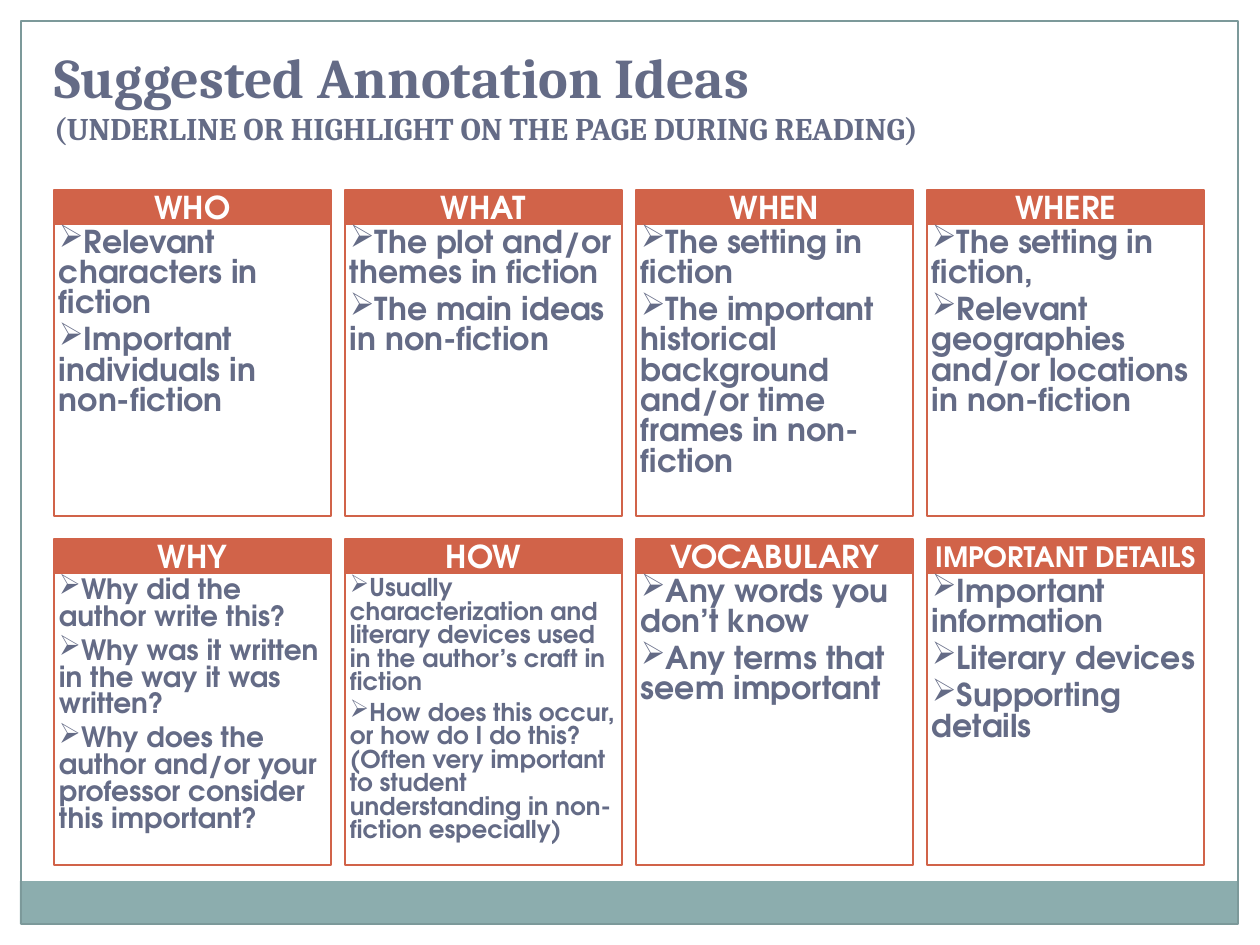
from dataclasses import dataclass

from lxml import etree
from pptx import Presentation
from pptx import util as u
from pptx.dml.color import RGBColor
from pptx.enum import shapes, text
from pptx.oxml.ns import qn

TITLE = "Suggested Annotation Ideas"
SUBTITLE = "(UNDERLINE OR HIGHLIGHT ON THE PAGE DURING READING)"

# heading, heading size, body size, points
CARDS = [
    ("WHO", 18, 18, ["Relevant characters in fiction",
                     "Important individuals in non-fiction"]),
    ("WHAT", 18, 18, ["The plot and/or themes in fiction",
                      "The main ideas in non-fiction"]),
    ("WHEN", 18, 18, ["The setting in fiction",
                      "The important historical background and/or time frames in non-fiction"]),
    ("WHERE", 18, 18, ["The setting in fiction,",
                       "Relevant geographies and/or locations in non-fiction"]),
    ("WHY", 18, 16, ["Why did the author write this?",
                     "Why was it written in the way it was written?",
                     "Why does the author and/or your professor consider this important?"]),
    ("HOW", 18, 14, ["Usually characterization and literary devices used in the author’s craft in fiction",
                     "How does this occur, or how do I do this? (Often very important to student "
                     "understanding in non-fiction especially)"]),
    ("VOCABULARY", 18, 18, ["Any words you don’t know",
                            "Any terms that seem important"]),
    ("IMPORTANT DETAILS", 16, 18, ["Important information", "Literary devices",
                                   "Supporting details"]),
]


@dataclass(frozen=True)
class Theme:
    accent: str = "D16349"
    ink: str = "646B86"
    white: str = "FFFFFF"
    band: str = "8CADAE"
    frame: str = "7C999A"
    title_font: str = "Cambria"
    body_font: str = "TeX Gyre Adventor"
    title_size: int = 32
    subtitle_size: int = 18


THEME = Theme()
PX = 914400 / 126

COLUMNS = 4
LEFT, TOP = 54, 190
PITCH_X, PITCH_Y = 291, 349
CARD_WIDTH, HEADER_HEIGHT, BODY_HEIGHT = 277, 34, 292
INSET = 5


def px(count):
    return u.Emu(round(count * PX))


def add_box(parent, bounds, fill=None, line=None, line_width=1):
    box = parent.add_shape(shapes.MSO_SHAPE.RECTANGLE, *map(px, bounds))
    box.shadow.inherit = False
    if fill:
        box.fill.solid()
        box.fill.fore_color.rgb = RGBColor.from_string(fill)
    else:
        box.fill.background()
    if line:
        box.line.color.rgb = RGBColor.from_string(line)
        box.line.width = u.Pt(line_width)
    else:
        box.line.fill.background()
    return box


def set_frame(box, inset, anchor):
    frame = box.text_frame
    frame.word_wrap = True
    frame.vertical_anchor = anchor
    frame.margin_left = frame.margin_right = px(inset)
    frame.margin_top = frame.margin_bottom = px(inset)
    return frame


def write_paragraphs(frame, lines, font, color, align):
    """Write (words, size) lines as bold paragraphs and return them."""
    for number, (words, size) in enumerate(lines):
        para = frame.paragraphs[0] if number == 0 else frame.add_paragraph()
        para.alignment = align
        span = para.add_run()
        span.text = words
        span.font.name = font
        span.font.size = u.Pt(size)
        span.font.bold = True
        span.font.color.rgb = RGBColor.from_string(color)
    return frame.paragraphs


def add_bullet(para):
    para.line_spacing = 0.8
    para.space_before = u.Pt(4)
    props = para._p.get_or_add_pPr()
    props.set("marL", "0")
    props.set("indent", "0")
    etree.SubElement(props, qn("a:buChar")).set("char", "➢")


def add_card(page, index, heading, heading_size, body_size, points):
    row, column = divmod(index, COLUMNS)
    left, top = LEFT + column * PITCH_X, TOP + row * PITCH_Y
    card = page.shapes.add_group_shape().shapes

    header = add_box(card, (left, top, CARD_WIDTH, HEADER_HEIGHT),
                     THEME.accent, THEME.accent)
    frame = set_frame(header, INSET, text.MSO_ANCHOR.MIDDLE)
    write_paragraphs(frame, [(heading, heading_size)], THEME.body_font,
                     THEME.white, text.PP_ALIGN.CENTER)

    body = add_box(card, (left, top + HEADER_HEIGHT, CARD_WIDTH, BODY_HEIGHT),
                   line=THEME.accent)
    frame = set_frame(body, INSET, text.MSO_ANCHOR.TOP)
    lines = [(point, body_size) for point in points]
    for para in write_paragraphs(frame, lines, THEME.body_font, THEME.ink,
                                 text.PP_ALIGN.LEFT):
        add_bullet(para)


def main():
    deck = Presentation()
    deck.slide_width, deck.slide_height = px(1260), px(945)
    page = deck.slides.add_slide(deck.slide_layouts[5])

    add_box(page.shapes, (20, 881, 1218, 43), THEME.band)
    add_box(page.shapes, (21, 21, 1217, 903), line=THEME.frame, line_width=0.75)

    title = page.shapes.title
    title.left, title.top, title.width, title.height = map(px, (54, 42, 922, 136))
    frame = set_frame(title, 0, text.MSO_ANCHOR.TOP)
    frame.auto_size = text.MSO_AUTO_SIZE.NONE
    write_paragraphs(frame, [(TITLE, THEME.title_size), (SUBTITLE, THEME.subtitle_size)],
                     THEME.title_font, THEME.ink, text.PP_ALIGN.LEFT)

    for index, card in enumerate(CARDS):
        add_card(page, index, *card)

    deck.save("out.pptx")


if __name__ == "__main__":
    main()
